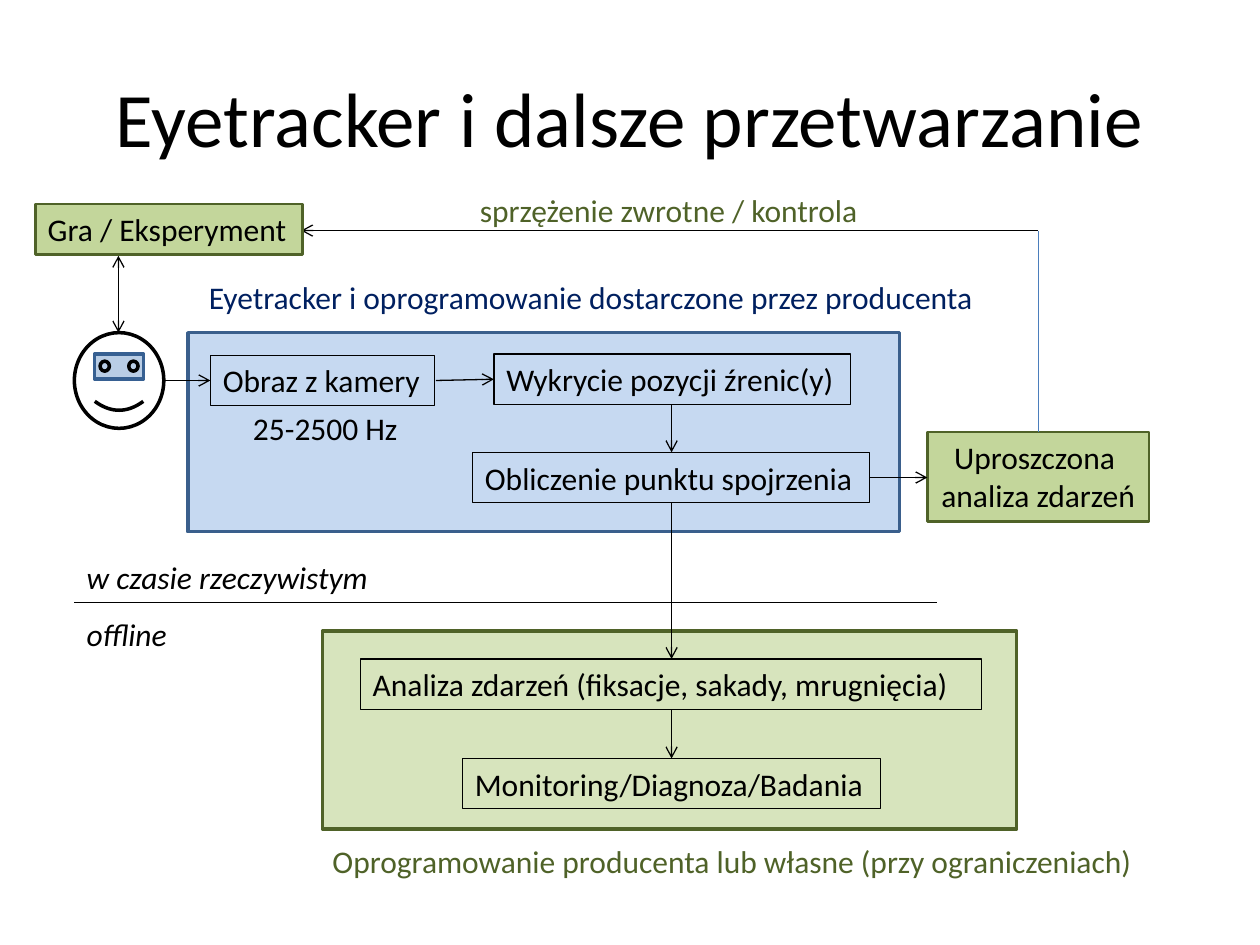
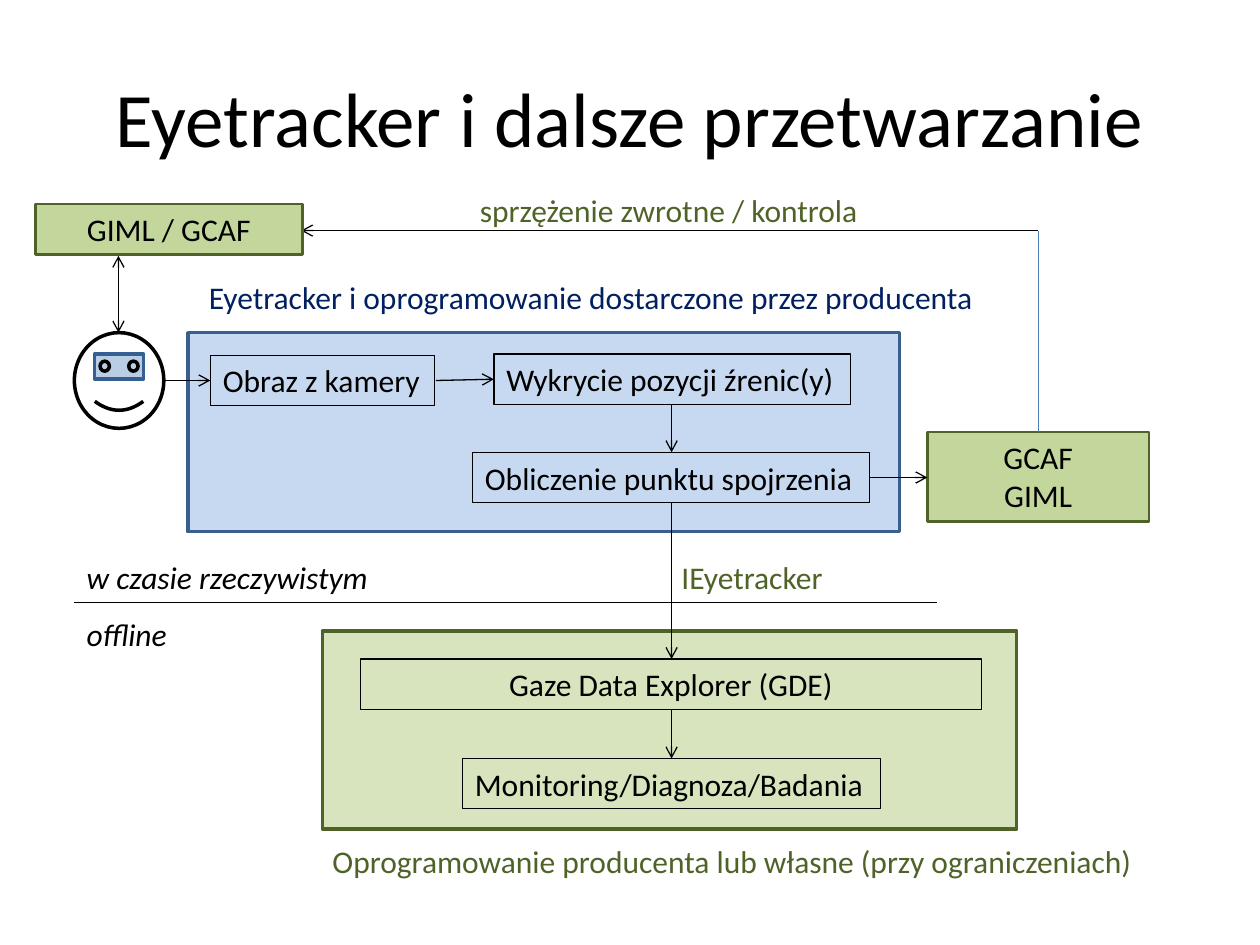
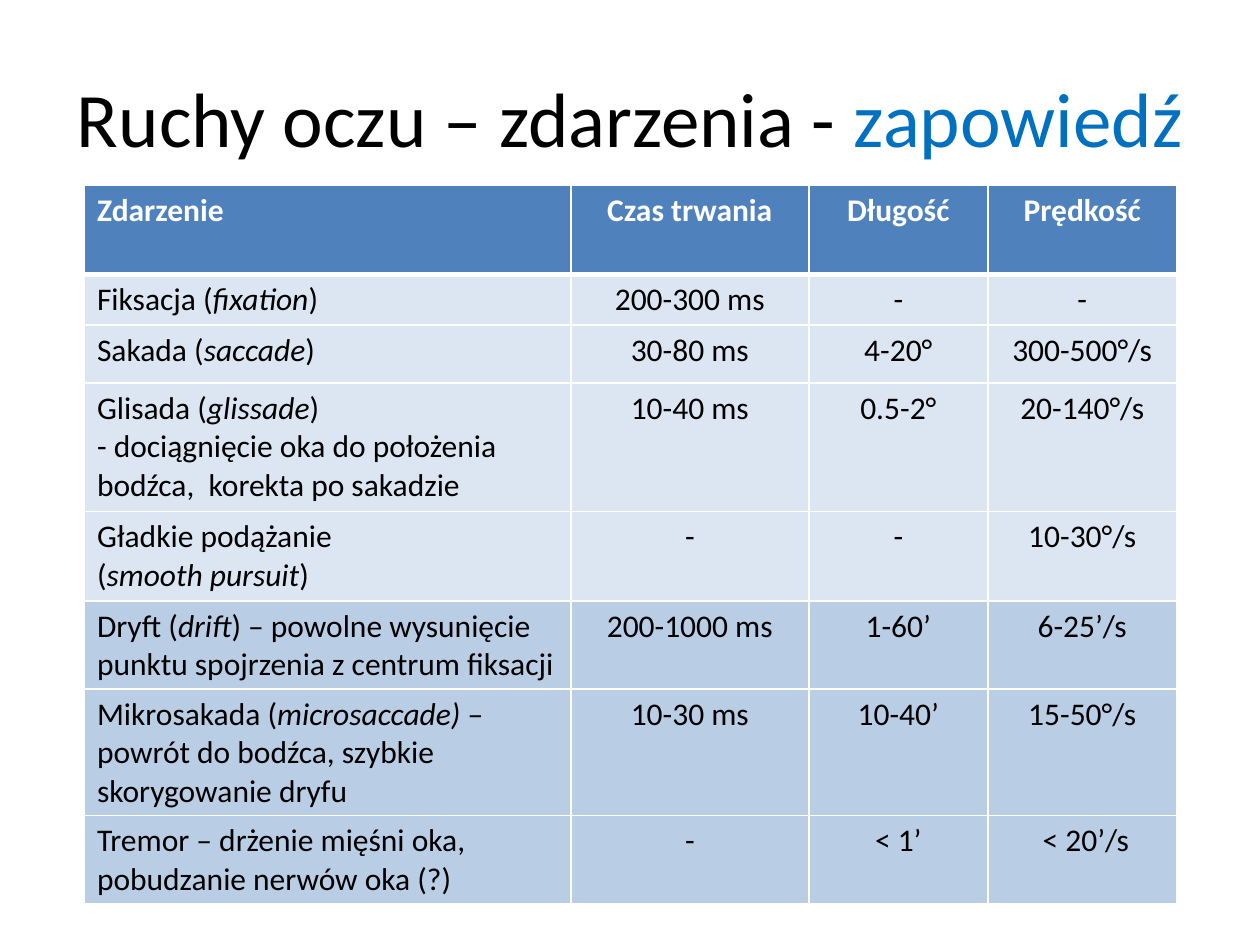
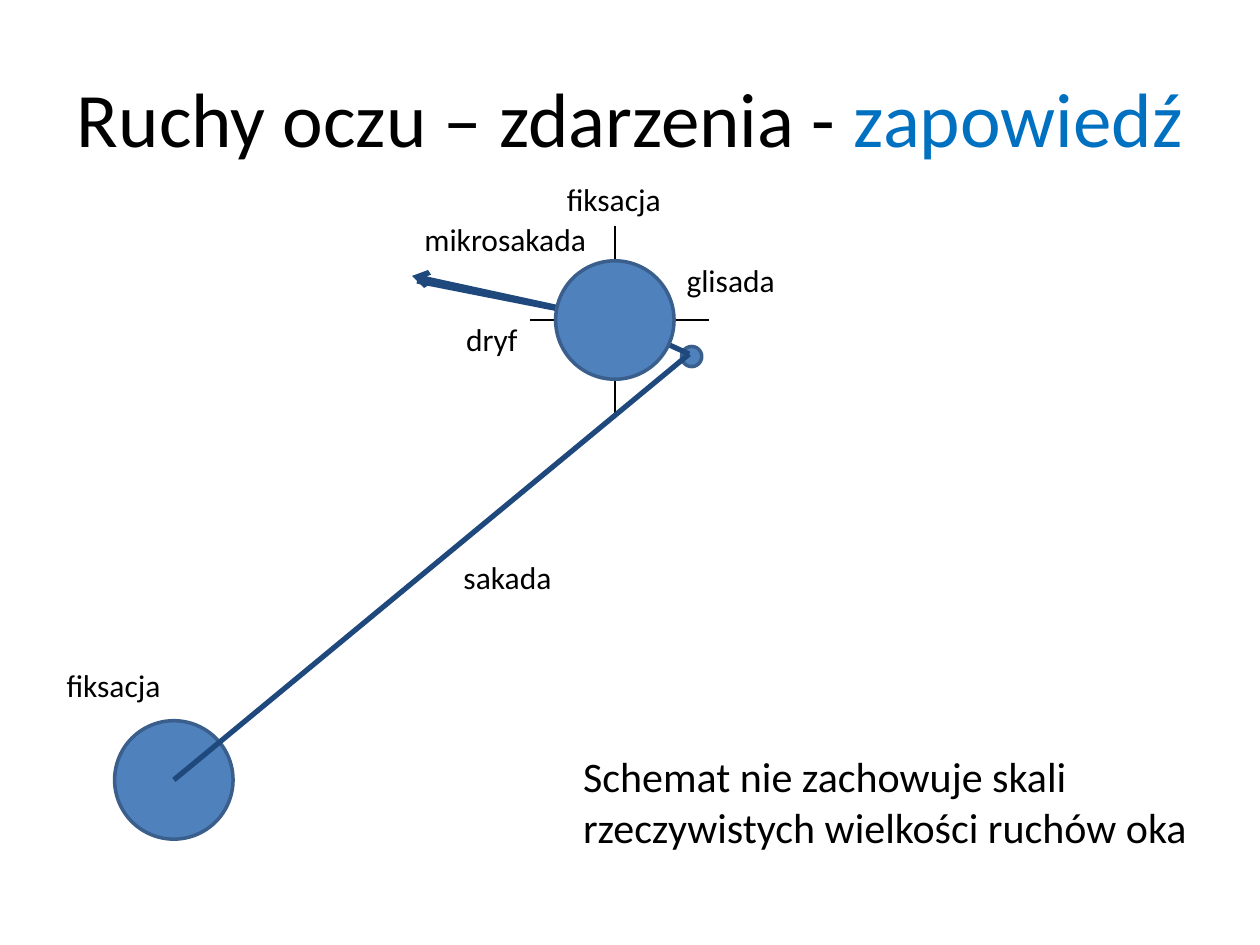
"""Builds four slides on eye tracking: two processing diagrams, a table of eye movements and a gaze sketch."""
from dataclasses import dataclass

from lxml import etree
from pptx import Presentation
from pptx import util as u
from pptx.dml.color import RGBColor
from pptx.enum import shapes, text as texts
from pptx.oxml import ns


@dataclass(frozen=True)
class Theme:
    font: str = "Calibri"
    title_size: int = 44
    note_size: int = 24
    body_size: int = 18
    thin: float = 0.75
    medium: float = 1.5
    thick: float = 2
    gaze: float = 3
    black: str = "000000"
    white: str = "FFFFFF"
    accent: str = "0070C0"
    navy: str = "002060"
    blue: str = "4F81BD"
    blue_edge: str = "3A5F8C"
    glasses_edge: str = "376092"
    feedback: str = "4B7EBC"
    gaze_line: str = "1F497D"
    blue_panel: str = "C6D9F1"
    blue_mid: str = "B9CDE5"
    blue_pale: str = "DCE6F2"
    green_dark: str = "4F6228"
    green_mid: str = "C3D69B"
    green_pale: str = "D7E4BD"


theme = Theme()


@dataclass
class Box:
    at: tuple
    text: str = ""
    kind: object = None
    fill: str = ""
    edge: str = theme.black
    weight: float = theme.thin
    colour: str = theme.black
    size: int = theme.body_size
    align: object = texts.PP_ALIGN.LEFT


@dataclass
class Line:
    start: tuple
    end: tuple
    colour: str = theme.black
    weight: float = theme.thin
    ends: tuple = ("tailEnd",)


presentation = Presentation()
presentation.slide_width, presentation.slide_height = u.Inches(10), u.Inches(7.5)
COLUMN = presentation.slide_width / 100
ROW = presentation.slide_height / 75
LEFT, CENTER, RIGHT = texts.PP_ALIGN.LEFT, texts.PP_ALIGN.CENTER, texts.PP_ALIGN.RIGHT
RECTANGLE, OVAL = shapes.MSO_SHAPE.RECTANGLE, shapes.MSO_SHAPE.OVAL
SMILEY = shapes.MSO_SHAPE.SMILEY_FACE


def place(*lengths):
    """Turns alternating columns and rows into slide lengths."""
    return [round(length * (ROW if index % 2 else COLUMN)) for index, length in enumerate(lengths)]


def write_text(frame, content, size, colour, align, bold=False, accent=None):
    """Writes runs; parts between asterisks are italic, or in the accent colour if one is given."""
    for number, line in enumerate(content.split("\n")):
        paragraph = frame.add_paragraph() if number else frame.paragraphs[0]
        paragraph.alignment = align
        for part, piece in enumerate(line.split("*")):
            for row, words in enumerate(piece.split("\v")):
                if row:
                    paragraph.add_line_break()
                if not words:
                    continue
                marked = part % 2 == 1
                run = paragraph.add_run()
                run.text = words
                run.font.name, run.font.size = theme.font, u.Pt(size)
                run.font.bold, run.font.italic = bold, marked and not accent
                run.font.color.rgb = RGBColor.from_string(accent if marked and accent else colour)


scenes = []

variants = [
    ("Gra / Eksperyment", LEFT, "Uproszczona \vanaliza zdarzeń",
     "Analiza zdarzeń (fiksacje, sakady, mrugnięcia)", LEFT,
     Box((19.1, 32, 13.6, 4), "25-2500 Hz")),
    ("GIML / GCAF", CENTER, "GCAF\nGIML", "Gaze Data Explorer (GDE)", CENTER,
     Box((53.1, 43.8, 13.3, 4), "IEyetracker", colour=theme.green_dark)),
]
for game, game_align, live_analysis, offline_analysis, offline_align, remark in variants:
    green = dict(kind=RECTANGLE, fill=theme.green_mid, edge=theme.green_dark, weight=theme.medium)
    axis, face, feedback, gaze_row = 53.3, 9.4, 82.4, 37.9
    scenes.append(("Eyetracker i dalsze przetwarzanie", [
        Box((7.5, 28.1, 3.9, 2), kind=RECTANGLE, fill=theme.blue_mid,
            edge=theme.glasses_edge, weight=theme.thick),
        Box((25.6, 50.1, 55.1, 15.7), kind=RECTANGLE, fill=theme.green_pale,
            edge=theme.green_dark, weight=theme.thick),
        Box((25.4, 66.3, 66.2, 4), "Oprogramowanie producenta lub własne (przy ograniczeniach)",
            colour=theme.green_dark),
        Box((14.9, 26.4, 56.5, 15.8), kind=RECTANGLE, fill=theme.blue_panel,
            edge=theme.blue_edge, weight=theme.thick),
        Box((14.9, 21.6, 63.3, 4), "Eyetracker i oprogramowanie dostarczone przez producenta",
            colour=theme.navy, align=RIGHT),
        Box((5.9, 26.4, 7.1, 7.6), kind=SMILEY, weight=theme.thick),
        Box((39.2, 28.1, 28.3, 4), "Wykrycie pozycji źrenic(y)", RECTANGLE),
        Line((34.6, 30.2), (39.2, 30.1)),
        Box((37.5, 35.9, 31.5, 4), "Obliczenie punktu spojrzenia", RECTANGLE),
        Line((axis, 32.1), (axis, 35.9)),
        Box((16.7, 28.2, 17.8, 4), "Obraz z kamery", RECTANGLE),
        Line((13, 30.2), (16.7, 30.2)),
        Line((5.9, 47.8), (74.4, 47.8), ends=()),
        Box((5.9, 43.8, 24.7, 4), "*w czasie rzeczywistym*"),
        Box((5.9, 48.3, 8.6, 4), "*offline*"),
        Box((73.6, 34.3, 17.6, 7.1), live_analysis, align=CENTER, **green),
        Line((69, gaze_row), (73.6, gaze_row)),
        Box((28.6, 52.3, 49.3, 4), offline_analysis, RECTANGLE, align=offline_align),
        Line((axis, 39.9), (axis, 52.3)),
        Box((36.7, 60.2, 33.2, 4), "Monitoring/Diagnoza/Badania", RECTANGLE),
        Line((axis, 56.3), (axis, 60.2)),
        Line((feedback, 34.3), (feedback, 18.3), theme.feedback, ends=()),
        Line((feedback, 18.3), (23.9, 18.3)),
        Box((37.1, 14.7, 32.4, 4), "sprzężenie zwrotne / kontrola", colour=theme.green_dark),
        Line((face, 20.3), (face, 26.4), ends=("headEnd", "tailEnd")),
        Box((2.8, 16.2, 21.2, 4), game, align=game_align, **green),
        remark,
    ]))

movements_title = "Ruchy oczu – zdarzenia - *zapowiedź*"
scenes.append((movements_title, []))

target, origin, overshoot = (48.8, 25.4), (13.8, 61.9), (54.7, 28.1)
radius = 4.7
first_fixation, last_fixation = [
    Box((x - radius, y - radius, 2 * radius, 2 * radius), kind=OVAL, fill=theme.blue,
        edge=theme.blue_edge, weight=theme.thick) for x, y in (origin, target)]
gaze = dict(colour=theme.gaze_line, weight=theme.gaze)
labels = [
    ("fiksacja", 4.3, 52.4, 9.6), ("sakada", 35.8, 43.8, 9.1), ("glisada", 53.5, 20.2, 9.1),
    ("fiksacja", 44, 13.8, 9.6), ("dryf", 36, 24.9, 6.2), ("mikrosakada", 32.7, 17, 15),
]
scenes.append((movements_title, [
    first_fixation,
    Line((target[0], 17.9), (target[0], 32.8), ends=()),
    Line((42.1, target[1]), (56.3, target[1]), ends=()),
    Box((54.1, 27.5, 1.6, 1.6), kind=OVAL, fill=theme.blue, edge=theme.blue_edge, weight=theme.thick),
    Line(target, overshoot, ends=(), **gaze),
    Line(origin, overshoot, ends=(), **gaze),
    Line(target, (32.7, 21.9), **gaze),
    Line((33.1, 22.3), target, **gaze),
    last_fixation,
    Box((45.3, 59.1, 50.4, 9.1), "Schemat nie zachowuje skali \vrzeczywistych wielkości ruchów oka",
        size=theme.note_size),
    *[Box((x, y, width, 4), label) for label, x, y, width in labels],
]))

for title, items in scenes:
    slide = presentation.slides.add_slide(presentation.slide_layouts[6])
    heading = slide.shapes.add_textbox(*place(5, 3, 90, 12.5)).text_frame
    heading.word_wrap = True
    heading.vertical_anchor = texts.MSO_ANCHOR.MIDDLE
    write_text(heading, title, theme.title_size, theme.black, CENTER, accent=theme.accent)
    for item in items:
        if isinstance(item, Line):
            connector = slide.shapes.add_connector(
                shapes.MSO_CONNECTOR.STRAIGHT, *place(*item.start, *item.end))
            connector.line.color.rgb = RGBColor.from_string(item.colour)
            connector.line.width = u.Pt(item.weight)
            properties = connector.element.spPr
            outline = properties.find(ns.qn("a:ln"))
            for end in item.ends:
                etree.SubElement(outline, ns.qn(f"a:{end}"), type="arrow")
            etree.SubElement(properties, ns.qn("a:effectLst"))
            continue
        if item.kind is None:
            shape = slide.shapes.add_textbox(*place(*item.at))
        else:
            shape = slide.shapes.add_shape(item.kind, *place(*item.at))
            shape.shadow.inherit = False
            shape.line.color.rgb = RGBColor.from_string(item.edge)
            shape.line.width = u.Pt(item.weight)
            if item.fill:
                shape.fill.solid()
                shape.fill.fore_color.rgb = RGBColor.from_string(item.fill)
            else:
                shape.fill.background()
        if item.text:
            shape.text_frame.word_wrap = False
            shape.text_frame.vertical_anchor = texts.MSO_ANCHOR.TOP
            write_text(shape.text_frame, item.text, item.size, item.colour, item.align)

movements = [
    ("Zdarzenie", "Czas trwania", "Długość", "Prędkość"),
    ("Fiksacja (*fixation*)", "200-300 ms", "-", "-"),
    ("Sakada (*saccade*)", "30-80 ms", "4-20°", "300-500°/s"),
    ("Glisada (*glissade*)\v- dociągnięcie oka do położenia bodźca,  korekta po sakadzie",
     "10-40 ms", "0.5-2°", "20-140°/s"),
    ("Gładkie podążanie\v(*smooth pursuit*)", "-", "-", "10-30°/s"),
    ("Dryft (*drift*) – powolne wysunięcie punktu spojrzenia z centrum fiksacji",
     "200-1000 ms", "1-60’", "6-25’/s"),
    ("Mikrosakada (*microsaccade) *– powrót do bodźca, szybkie skorygowanie dryfu",
     "10-30 ms", "10-40’", "15-50°/s"),
    ("Tremor – drżenie mięśni oka, pobudzanie nerwów oka (?)", "-", "< 1’", " < 20’/s"),
]
column_widths = [38.6, 18.9, 14.2, 15]
row_heights = [7.1, 3.9, 4.6, 10.2, 7.1, 6.3, 6.3, 4.8]
row_fills = [theme.blue] + [theme.blue_pale] * 4 + [theme.blue_mid] * 3

table = presentation.slides[2].shapes.add_table(
    len(movements), len(column_widths),
    *place(6.7, 14.7, sum(column_widths), sum(row_heights))).table
table.horz_banding = False
for column, width in zip(table.columns, column_widths):
    column.width = round(width * COLUMN)
for row, height in zip(table.rows, row_heights):
    row.height = round(height * ROW)
for row_index, values in enumerate(movements):
    header = row_index == 0
    for column_index, value in enumerate(values):
        cell = table.cell(row_index, column_index)
        write_text(cell.text_frame, value, theme.body_size, theme.white if header else theme.black,
                   CENTER if column_index else LEFT, bold=header)
        properties = cell._tc.get_or_add_tcPr()
        for side in "LRTB":
            under_header = (row_index, side) in ((0, "B"), (1, "T"))
            border = etree.SubElement(properties, ns.qn(f"a:ln{side}"), w=str(u.Pt(3 if under_header else 1)))
            paint = etree.SubElement(border, ns.qn("a:solidFill"))
            etree.SubElement(paint, ns.qn("a:srgbClr"), val=theme.white)
        cell.fill.solid()
        cell.fill.fore_color.rgb = RGBColor.from_string(row_fills[row_index])

presentation.save("out.pptx")
